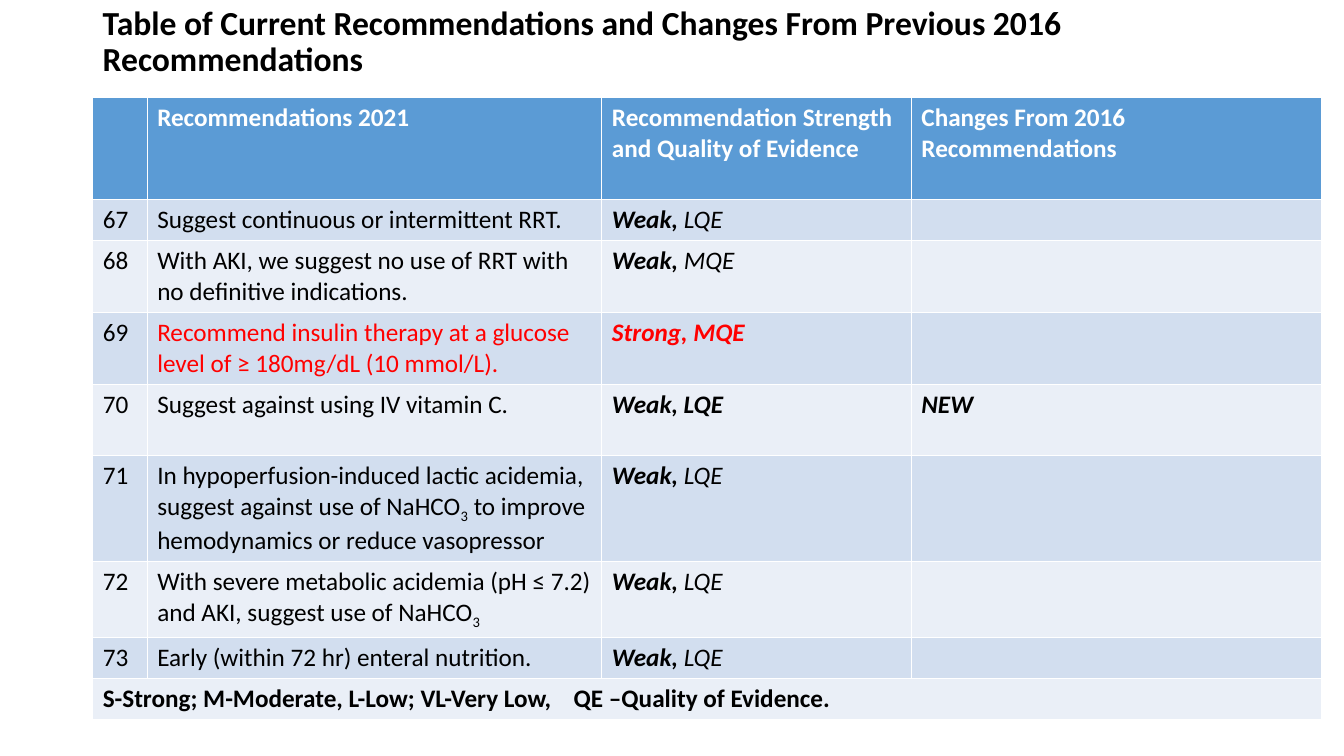
from lxml.etree import SubElement
from pptx import Presentation
from pptx.dml.color import RGBColor
from pptx.enum.text import MSO_ANCHOR, MSO_AUTO_SIZE
from pptx.oxml.ns import qn
from pptx.util import Inches, Pt

BLACK, WHITE, RED = "000000", "FFFFFF", "FF0000"
HEADER_FILL = "5B9BD5"
BAND_FILLS = ("D2DEEF", "EAEFF7")
CONTENT_LEFT, CONTENT_WIDTH = 0.92, 12.19
COLUMN_WIDTHS = (0.54, 4.51, 3.07, 4.07)
HEADER_HEIGHT, LINE_HEIGHT, FOOTER_HEIGHT = 1.01, 0.41, 0.41
TWO_LINES, THREE_LINES = 0.71, 1.05

TITLE = "Table of Current Recommendations and Changes From Previous 2016 Recommendations"
HEADINGS = (
    "",
    "Recommendations 2021",
    "Recommendation Strength\nand Quality of Evidence",
    "Changes From 2016 Recommendations",
)
LEGEND = "S-Strong; M-Moderate, L-Low; VL-Very Low,\tQE –Quality of Evidence."
LEGEND_TAB = 4.67

# Number, advice (subscript marked by _), strength, evidence, change, row height
RECOMMENDATIONS = (
    (67, "Suggest continuous or intermittent RRT.", "Weak, ", "LQE", "", LINE_HEIGHT),
    (68, "With AKI, we suggest no use of RRT with no definitive indications.",
     "Weak, ", "MQE", "", TWO_LINES),
    (69, "Recommend insulin therapy at a glucose\nlevel of ≥ 180mg/dL (10 mmol/L).",
     "Strong, MQE", "", "", TWO_LINES),
    (70, "Suggest against using IV vitamin C.", "Weak, LQE", "", "NEW", TWO_LINES),
    (71, "In hypoperfusion-induced lactic acidemia, suggest against use of "
     "NaHCO_3_ to improve hemodynamics or reduce vasopressor",
     "Weak, ", "LQE", "", THREE_LINES),
    (72, "With severe metabolic acidemia (pH ≤ 7.2) and AKI, suggest use of NaHCO_3_",
     "Weak, ", "LQE", "", 0.75),
    (73, "Early (within 72 hr) enteral nutrition.", "Weak, ", "LQE", "", LINE_HEIGHT),
)
HIGHLIGHTED = {69}


def color(hex_code):
    return RGBColor.from_string(hex_code)


def write(paragraph, text, size=18, fill=BLACK, bold=False, italic=False):
    """Append text to a paragraph; parts between underscores become subscripts."""
    for index, part in enumerate(text.split("_")):
        if not part:
            continue
        run = paragraph.add_run()
        run.text = part
        font = run.font
        font.name, font.size = "Calibri", Pt(size)
        font.bold, font.italic = bold, italic
        font.color.rgb = color(fill)
        if index % 2:
            run._r.get_or_add_rPr().set("baseline", "-25000")


def write_lines(frame, text, **style):
    for index, line in enumerate(text.split("\n")):
        paragraph = frame.add_paragraph() if index else frame.paragraphs[0]
        write(paragraph, line, **style)


def add_title(slide, left, top, width, height):
    title = slide.shapes.add_textbox(*map(Inches, (left, top, width, height)))
    frame = title.text_frame
    frame.word_wrap = True
    frame.auto_size = MSO_AUTO_SIZE.NONE
    frame.vertical_anchor = MSO_ANCHOR.MIDDLE
    frame.paragraphs[0].line_spacing = 0.9
    write(frame.paragraphs[0], TITLE, size=24, bold=True)


def fill_row(cells, hex_code):
    for cell in cells:
        cell.fill.solid()
        cell.fill.fore_color.rgb = color(hex_code)


def add_legend(cells):
    cells[0].merge(cells[-1])
    paragraph = cells[0].text_frame.paragraphs[0]
    write(paragraph, LEGEND, bold=True)
    tabs = SubElement(paragraph._p.get_or_add_pPr(), qn("a:tabLst"))
    SubElement(tabs, qn("a:tab"), pos=str(Inches(LEGEND_TAB)), algn="l")


def add_recommendations(slide, left, top, width):
    heights = [HEADER_HEIGHT, *(entry[-1] for entry in RECOMMENDATIONS), FOOTER_HEIGHT]
    table = slide.shapes.add_table(
        len(heights), len(COLUMN_WIDTHS),
        *map(Inches, (left, top, width, sum(heights))),
    ).table
    for column, share in zip(table.columns, COLUMN_WIDTHS):
        column.width = Inches(width * share / sum(COLUMN_WIDTHS))
    for index, (row, height) in enumerate(zip(table.rows, heights)):
        row.height = Inches(height)
        fill_row(row.cells, BAND_FILLS[(index - 1) % 2] if index else HEADER_FILL)

    rows = [list(row.cells) for row in table.rows]
    for cell, heading in zip(rows[0], HEADINGS):
        write_lines(cell.text_frame, heading, fill=WHITE, bold=True)
    for cells, entry in zip(rows[1:], RECOMMENDATIONS):
        number, advice, strength, evidence, change, _ = entry
        ink = RED if number in HIGHLIGHTED else BLACK
        number_frame, advice_frame, rating_frame, change_frame = (
            cell.text_frame for cell in cells)
        write_lines(number_frame, str(number))
        write_lines(advice_frame, advice, fill=ink)
        write_lines(rating_frame, strength, fill=ink, bold=True, italic=True)
        write(rating_frame.paragraphs[0], evidence, fill=ink, italic=True)
        write_lines(change_frame, change, bold=True, italic=True)
    add_legend(rows[-1])


def main():
    deck = Presentation()
    deck.slide_width, deck.slide_height = Inches(13.33), Inches(7.5)
    slide = deck.slides.add_slide(deck.slide_layouts[6])
    add_title(slide, CONTENT_LEFT, 0.18, CONTENT_WIDTH, 0.49)
    add_recommendations(slide, CONTENT_LEFT, 0.97, CONTENT_WIDTH)
    deck.save("out.pptx")


if __name__ == "__main__":
    main()
